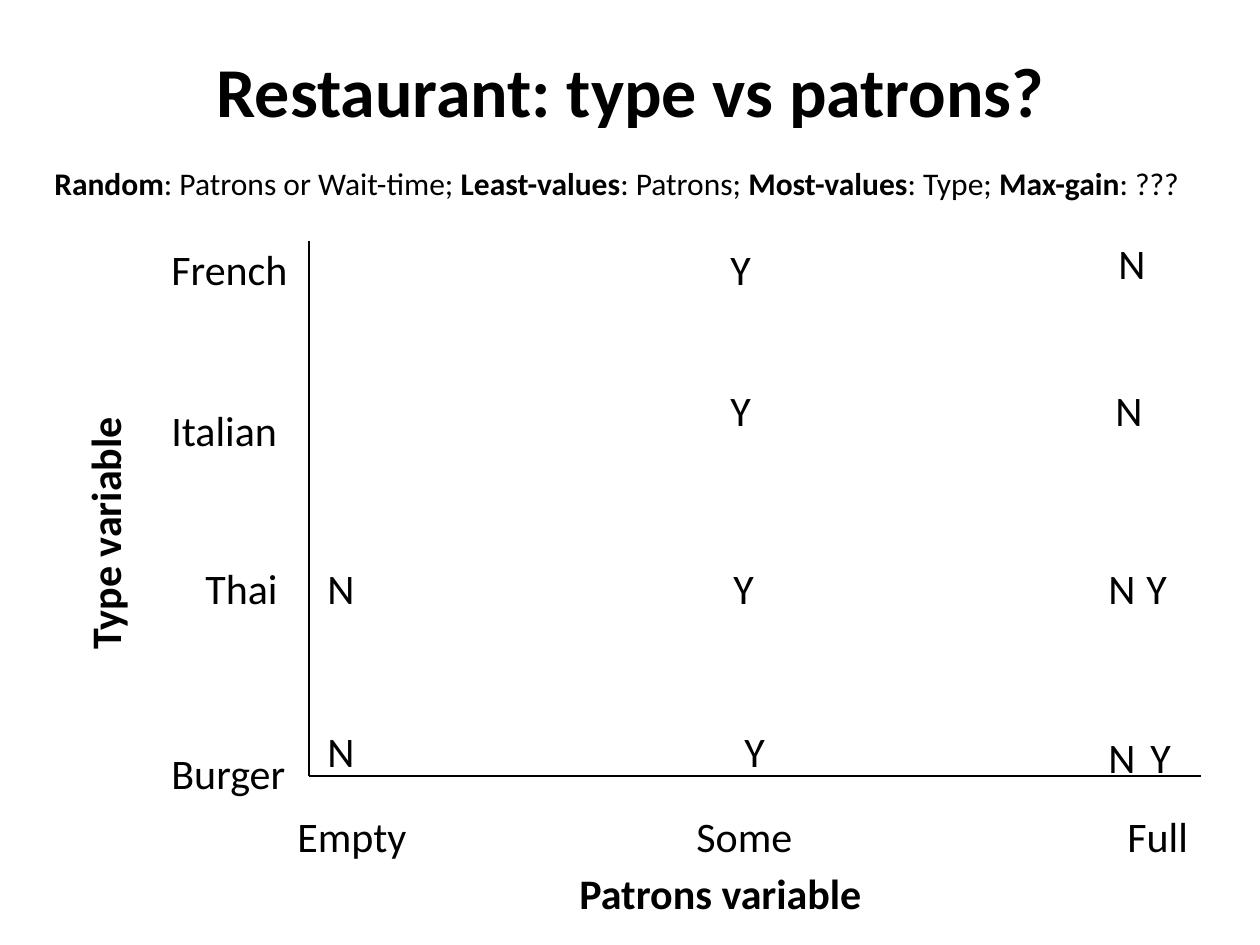
from pptx import Presentation
from pptx.dml.color import RGBColor
from pptx.enum.shapes import MSO_CONNECTOR
from pptx.enum.text import MSO_ANCHOR, MSO_AUTO_SIZE, PP_ALIGN
from pptx.oxml.ns import qn
from pptx.util import Emu, Pt
from lxml.etree import SubElement

COLORS = {"ink": "000000"}
FONT = "Calibri"


def px(*lengths):
    return [Emu(round(length * 914400 / 126)) for length in lengths]


def write(holder, text, size=24, bold=False, align=PP_ALIGN.LEFT,
          anchor=MSO_ANCHOR.TOP, wrap=False, vert=None):
    """Write text into a shape; parts between ** marks are bold."""
    frame = holder.text_frame
    frame.word_wrap = wrap
    frame.auto_size = MSO_AUTO_SIZE.NONE if wrap else MSO_AUTO_SIZE.SHAPE_TO_FIT_TEXT
    frame.vertical_anchor = anchor
    if vert:
        frame._txBody.bodyPr.set("vert", vert)
    paragraph = frame.paragraphs[0]
    paragraph.alignment = align
    for i, part in enumerate(text.split("**")):
        if part:
            run = paragraph.add_run()
            run.text = part
            run.font.name = FONT
            run.font.size = Pt(size)
            run.font.bold = bold or i % 2 == 1
            run.font.color.rgb = RGBColor.from_string(COLORS["ink"])


prs = Presentation()
prs.slide_width, prs.slide_height = px(1260, 945)
slide = prs.slides.add_slide(prs.slide_layouts[5])

# Title
title = slide.shapes.title
title.left, title.top, title.width, title.height = px(95, 10, 1071, 158)
write(title, "Restaurant: type vs patrons?", size=40, bold=True,
      align=PP_ALIGN.CENTER, anchor=MSO_ANCHOR.MIDDLE, wrap=True)

# Axes, meeting at the lower left corner
plot = slide.shapes.add_group_shape().shapes
origin = (309, 776)
for start, end in [((309, 241), origin), (origin, (1201, 776))]:
    axis = plot.add_connector(MSO_CONNECTOR.STRAIGHT, *px(*start, *end))
    axis.line.color.rgb = RGBColor.from_string(COLORS["ink"])
    axis.line.width = Pt(0.75)
    SubElement(axis._element.spPr, qn("a:effectLst"))

# Restaurant types and patron levels along the axes: text, left, top, width
tick_labels = [
    ("French", 159, 237, 142), ("Italian", 159, 398, 132),
    ("Thai", 193, 556, 98), ("Burger", 159, 741, 142),
    ("Empty", 285, 804, 137), ("Some", 684, 804, 122), ("Full", 1115, 804, 87),
]

# Outcomes of the examples: left and top of each letter
outcomes = {
    "Y": [(718, 237), (718, 378), (721, 556), (732, 719), (1134, 556), (1138, 725)],
    "N": [(1096, 725), (1096, 556), (1103, 378), (1106, 231), (315, 556), (315, 719)],
}
outcome_widths = {"Y": 47, "N": 53}
marks = [(letter, left, top, outcome_widths[letter])
         for letter, places in outcomes.items() for left, top in places]

for text, left, top, width in tick_labels + marks:
    write(plot.add_textbox(*px(left, top, width, 64)), text)

# Attribute choice of each strategy
strategies = slide.shapes.add_textbox(*px(42, 158, 1183, 50))
write(strategies, "**Random**: Patrons or Wait-time; **Least-values**: Patrons; "
      "**Most-values**: Type; **Max-gain**: ???", size=18)

# Axis titles
patrons_title = slide.shapes.add_textbox(*px(567, 861, 325, 64))
write(patrons_title, "Patrons variable", bold=True)
type_title = slide.shapes.add_textbox(*px(73, 413, 77, 249))
write(type_title, "Type variable", bold=True, vert="vert270")

prs.save("out.pptx")
